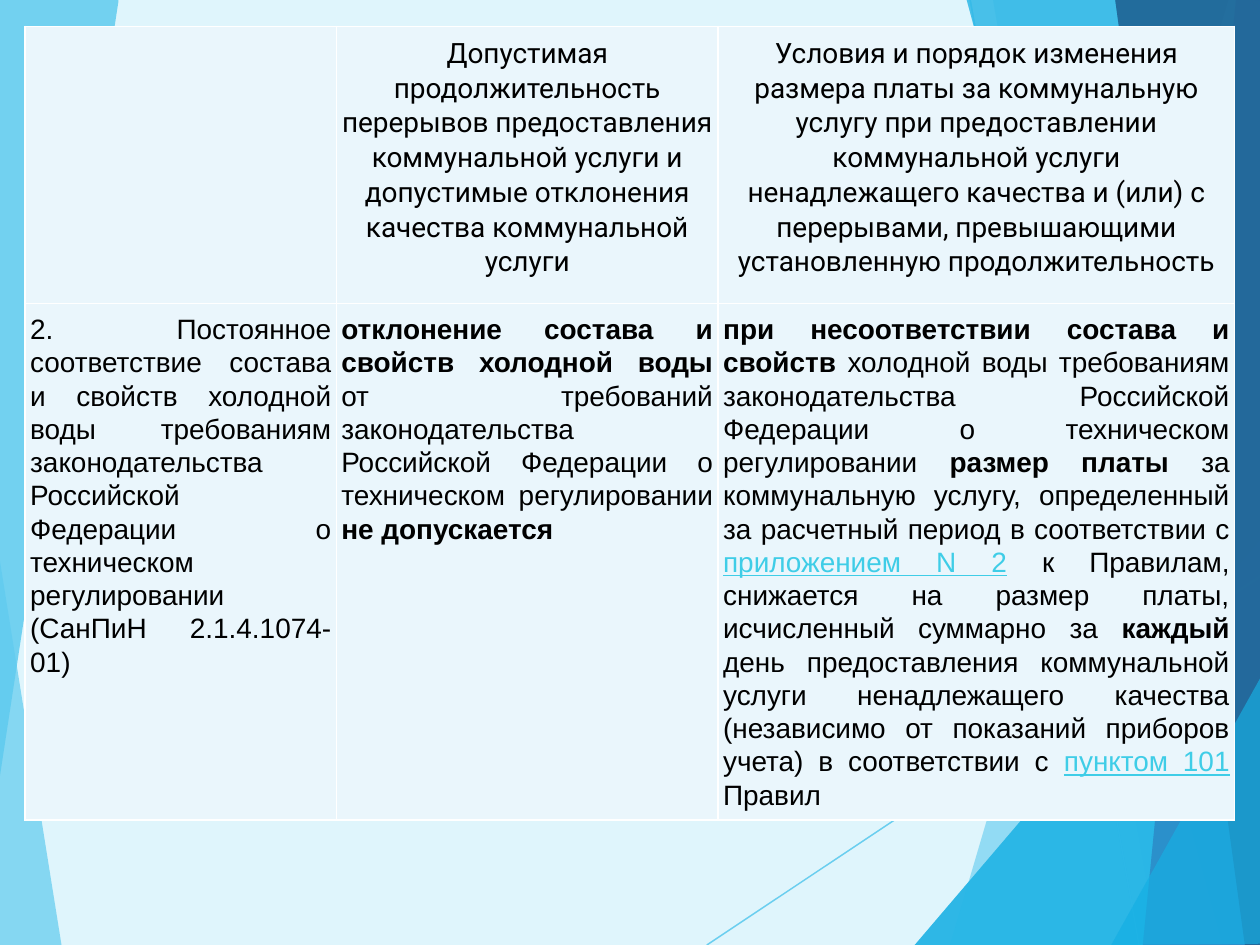
from lxml import etree
from pptx import Presentation
from pptx.dml.color import RGBColor
from pptx.enum.shapes import MSO_CONNECTOR
from pptx.enum.text import PP_ALIGN
from pptx.oxml import parse_xml
from pptx.oxml.ns import nsdecls, qn
from pptx.util import Inches, Pt

COLORS = {
    "background": "DFF5FC", "sky": "5FCBEF", "azure": "17B0E4",
    "blue": "2E83C3", "navy": "226292", "cell": "EAF6FC",
    "border": "FFFFFF", "text": "000000", "link": "3FCDE7",
}

# Each facet: corner points, colour, opacity in percent
LEFT_TRIANGLE = ([(-0.01, 4.39), (0.49, 7.51), (-0.01, 7.5)], "sky", 70)
LEFT_WEDGE = ([(-0.01, 0), (0.94, -0.01), (0.94, 0.01), (-0.01, 6.22)], "sky", 85)
RIGHT_FACETS = [
    ([(9.75, 0), (7.54, 7.5), (10.02, 7.51), (10.01, 0.01)], "sky", 36),
    ([(7.88, -0.01), (9.19, 7.5), (10.01, 7.5), (10.01, -0.01)], "sky", 20),
    ([(7.26, 7.5), (10, 4.29), (10.01, 7.5)], "azure", 66),
    ([(7.67, -0.01), (9.7, 7.5), (10.01, 7.49), (10.01, -0.01)], "azure", 50),
    ([(9.81, -0.01), (9.07, 7.5), (10.01, 7.5), (10, -0.01)], "blue", 70),
    ([(8.85, -0.01), (9.88, 7.5), (10.02, 7.5), (10, -0.01)], "navy", 82),
    ([(8.82, 7.5), (10.02, 5.35), (10.02, 7.49)], "azure", 66),
]
RIGHT_LINES = [((5.61, 7.5), (10.01, 4.57)), ((7.7, 0), (9.04, 7.5))]

COL_WIDTHS = [2.47, 3.03, 4.1]
ROW_HEIGHTS = [2.2, 4.1]

# Each cell is a list of (text, style) runs
HEADER = [
    [],
    [("Допустимая продолжительность перерывов предоставления коммунальной "
      "услуги и допустимые отклонения качества коммунальной услуги", "plain")],
    [("Условия и порядок изменения размера платы за коммунальную услугу при "
      "предоставлении коммунальной услуги ненадлежащего качества и (или) с "
      "перерывами, превышающими установленную продолжительность", "plain")],
]
BODY = [
    [("2. Постоянное соответствие состава и свойств холодной воды требованиям "
      "законодательства Российской Федерации о техническом регулировании "
      "(СанПиН 2.1.4.1074-01)", "plain")],
    [("отклонение состава и свойств холодной воды ", "bold"),
     ("от требований законодательства Российской Федерации о техническом "
      "регулировании ", "plain"),
     ("не допускается", "bold")],
    [("при несоответствии состава и свойств ", "bold"),
     ("холодной воды требованиям законодательства Российской Федерации о "
      "техническом регулировании ", "plain"),
     ("размер платы ", "bold"),
     ("за коммунальную услугу, определенный за расчетный период в "
      "соответствии с ", "plain"),
     ("приложением N 2", "link"),
     (" к Правилам, снижается на размер платы, исчисленный суммарно за ", "plain"),
     ("каждый", "bold"),
     (" день предоставления коммунальной услуги ненадлежащего качества "
      "(независимо от показаний приборов учета) в соответствии с ", "plain"),
     ("пунктом 101", "link"),
     (" Правил", "plain")],
]


def rgb(name):
    return RGBColor.from_string(COLORS[name])


def set_alpha(shape, percent):
    """Set the opacity of the shape's only solid colour."""
    color = shape._element.spPr.find(".//" + qn("a:srgbClr"))
    etree.SubElement(color, qn("a:alpha")).set("val", str(percent * 1000))


def add_facet(s, points, color, opacity):
    start, *rest = [(Inches(x), Inches(y)) for x, y in points]
    builder = s.shapes.build_freeform(*start)
    builder.add_line_segments(rest, close=True)
    sp = builder.convert_to_shape()
    sp.shadow.inherit = False
    sp.fill.solid()
    sp.fill.fore_color.rgb = rgb(color)
    sp.line.fill.background()
    set_alpha(sp, opacity)


def add_thin_line(s, start, end):
    ends = [Inches(v) for v in (*start, *end)]
    line = s.shapes.add_connector(MSO_CONNECTOR.STRAIGHT, *ends)
    line.line.color.rgb = rgb("sky")
    line.line.width = Pt(0.75)
    set_alpha(line, 70)
    etree.SubElement(line._element.spPr, qn("a:effectLst"))


def add_right_facets(s):
    for start, end in RIGHT_LINES:
        add_thin_line(s, start, end)
    for facet in RIGHT_FACETS:
        add_facet(s, *facet)


def set_borders(cell):
    tcPr = cell._tc.get_or_add_tcPr()
    for i, side in enumerate(("lnL", "lnR", "lnT", "lnB")):
        tcPr.insert(i, parse_xml(
            f'<a:{side} {nsdecls("a")} w="{Pt(1)}"><a:solidFill>'
            f'<a:srgbClr val="{COLORS["border"]}"/></a:solidFill></a:{side}>'))


def fill_cell(cell, runs, font, align):
    cell.fill.solid()
    cell.fill.fore_color.rgb = rgb("cell")
    cell.margin_left = cell.margin_right = Inches(0.04)
    cell.margin_top = cell.margin_bottom = Inches(0.07)
    set_borders(cell)
    p = cell.text_frame.paragraphs[0]
    p.alignment = align
    p.line_spacing = 1.07
    for text, style in runs:
        r = p.add_run()
        r.text = text
        r.font.name = font
        r.font.size = Pt(16)
        r.font.bold = style == "bold"
        r.font.underline = style == "link"
        r.font.color.rgb = rgb("link" if style == "link" else "text")


def add_rules_table(s):
    table = s.shapes.add_table(
        len(ROW_HEIGHTS), len(COL_WIDTHS), Inches(0.2), Inches(0.21),
        Inches(sum(COL_WIDTHS)), Inches(sum(ROW_HEIGHTS))).table
    table.first_row = table.horz_banding = False
    for column, width in zip(table.columns, COL_WIDTHS):
        column.width = Inches(width)
    for row, height in zip(table.rows, ROW_HEIGHTS):
        row.height = Inches(height)
    rows = [(HEADER, "Roboto", PP_ALIGN.CENTER), (BODY, "Arial", PP_ALIGN.JUSTIFY)]
    for row, (texts, font, align) in zip(table.rows, rows):
        for cell, runs in zip(row.cells, texts):
            fill_cell(cell, runs, font, align)


def main():
    prs = Presentation()
    prs.slide_width, prs.slide_height = Inches(10), Inches(7.5)
    s = prs.slides.add_slide(prs.slide_layouts[6])
    s.background.fill.solid()
    s.background.fill.fore_color.rgb = rgb("background")
    add_facet(s, *LEFT_TRIANGLE)
    for _ in range(2):  # two translucent layers deepen the colours
        add_right_facets(s)
    add_facet(s, *LEFT_WEDGE)
    add_rules_table(s)
    prs.save("out.pptx")


if __name__ == "__main__":
    main()
